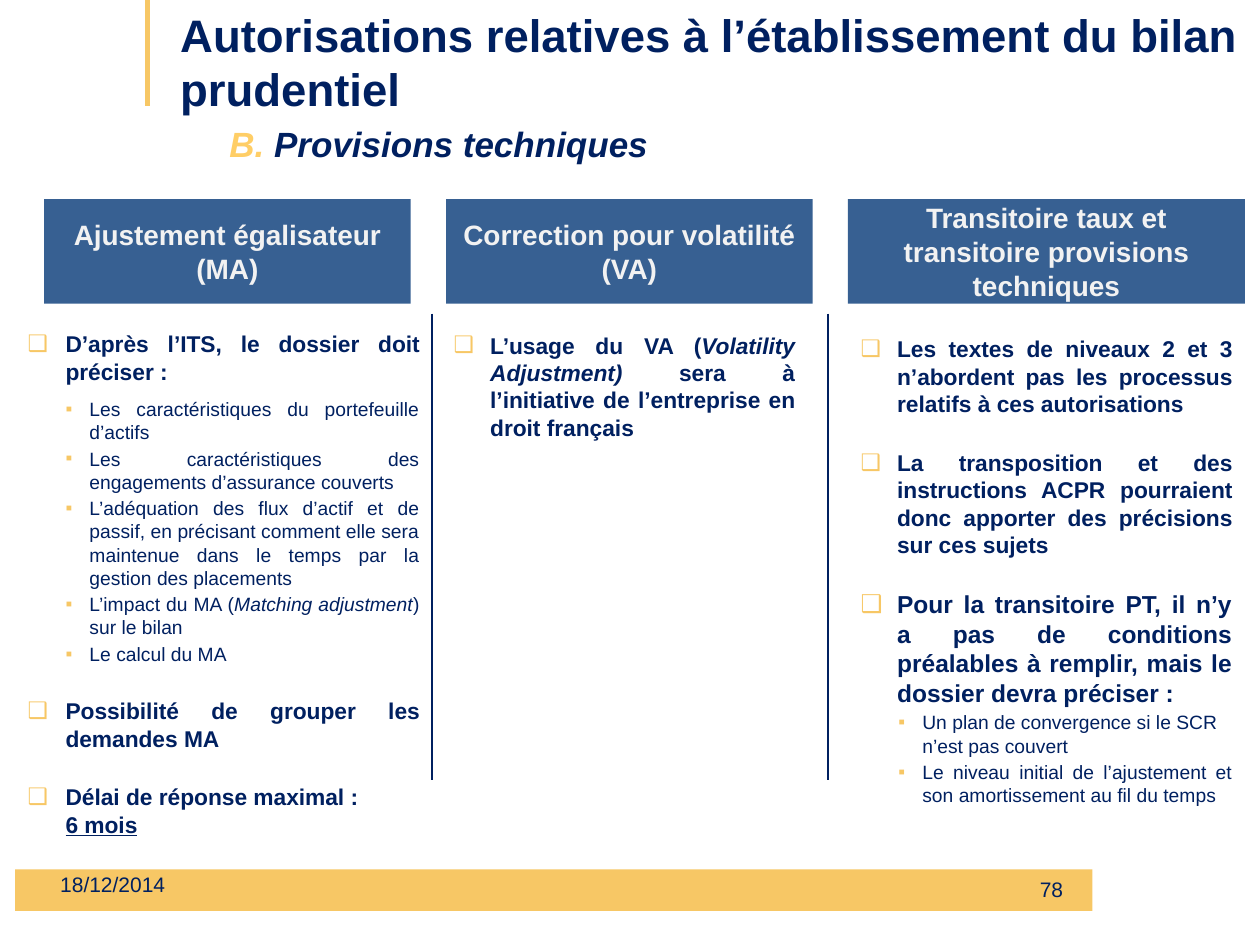
from dataclasses import dataclass

from lxml.etree import SubElement
from pptx import Presentation
from pptx.dml.color import RGBColor
from pptx.enum.shapes import MSO_CONNECTOR, MSO_SHAPE
from pptx.enum.text import MSO_ANCHOR, MSO_AUTO_SIZE, PP_ALIGN
from pptx.oxml.ns import qn
from pptx.util import Inches, Pt

NAVY = RGBColor(0x00, 0x20, 0x60)
GOLD = RGBColor(0xF7, 0xC7, 0x65)
LIGHT_GOLD = RGBColor(0xFF, 0xCE, 0x66)
BLUE = RGBColor(0x37, 0x60, 0x92)
PALE = RGBColor(0xF2, 0xF2, 0xF2)
FONT = "Arial"
HEADER_TOP, HEADER_HEIGHT = 1.58, 0.83


@dataclass
class Span:
    text: str
    italic: bool = False
    underline: bool = False


@dataclass
class Item:
    spans: list[Span]
    before: float = 0
    size: float = 13
    sub: bool = False
    align: PP_ALIGN = PP_ALIGN.JUSTIFY


@dataclass
class Column:
    header: str
    header_left: float
    header_width: float
    body: tuple[float, float, float, float]
    placeholder: int
    hanging: float
    items: list[Item]


def main_item(text: str, before: float = 18, size: float = 13) -> Item:
    return Item([Span(text)], before, size)


def sub_item(text: str, before: float = 2, align: PP_ALIGN = PP_ALIGN.JUSTIFY) -> Item:
    return Item([Span(text)], before, 11, True, align)


COLUMNS = [
    Column("Ajustement égalisateur (MA)", 0.35, 2.91, (0.12, 2.57, 3.31, 4.25), 1, 0.3, [
        main_item("D’après l’ITS, le dossier doit préciser :", 0),
        sub_item("Les caractéristiques du portefeuille d’actifs", 7),
        sub_item("Les caractéristiques des engagements d’assurance couverts"),
        sub_item("L’adéquation des flux d’actif et de passif, en précisant comment "
                 "elle sera maintenue dans le temps par la gestion des placements"),
        Item([Span("L’impact du MA ("), Span("Matching adjustment", italic=True),
              Span(") sur le bilan")], 2, 11, True),
        sub_item("Le calcul du MA"),
        main_item("Possibilité de grouper les demandes MA"),
        Item([Span("Délai de réponse maximal :\v"), Span("6 mois", underline=True)],
             18, align=PP_ALIGN.LEFT),
    ]),
    Column("Correction pour volatilité (VA)", 3.54, 2.91, (3.5, 2.58, 2.91, 2.27), 2, 0.29, [
        Item([Span("L’usage du VA ("), Span("Volatility Adjustment) ", italic=True),
              Span("sera à l’initiative de l’entreprise en droit français")]),
    ]),
    Column("Transitoire taux et transitoire provisions techniques", 6.73, 3.15,
           (6.73, 2.61, 3.15, 3.98), 4, 0.29, [
        main_item("Les textes de niveaux 2 et 3 n’abordent pas les processus relatifs "
                  "à ces autorisations", 0),
        main_item("La transposition et des instructions ACPR pourraient donc apporter "
                  "des précisions sur ces sujets"),
        main_item("Pour la transitoire PT, il n’y a pas de conditions préalables à remplir, "
                  "mais le dossier devra préciser :", size=14),
        sub_item("Un plan de convergence si le SCR n’est pas couvert", align=PP_ALIGN.LEFT),
        sub_item("Le niveau initial de l’ajustement et son amortissement au fil du temps"),
    ]),
]


def place(shape, left: float, top: float, width: float, height: float) -> None:
    shape.left, shape.top = Inches(left), Inches(top)
    shape.width, shape.height = Inches(width), Inches(height)


def style(run, size: float, color: RGBColor = NAVY, bold: bool = False,
          italic: bool = False) -> None:
    run.font.name = FONT
    run.font.size = Pt(size)
    run.font.color.rgb = color
    run.font.bold = bold
    run.font.italic = italic


def set_indent(paragraph, left: float, hanging: float = 0) -> None:
    properties = paragraph._p.get_or_add_pPr()
    properties.set("marL", str(Inches(left)))
    properties.set("indent", str(-Inches(hanging)))


def add_bullet(paragraph, symbol: str) -> None:
    properties = paragraph._p.get_or_add_pPr()
    color = SubElement(properties, qn("a:buClr"))
    SubElement(color, qn("a:srgbClr")).set("val", str(GOLD))
    SubElement(properties, qn("a:buFont")).set("typeface", FONT)
    SubElement(properties, qn("a:buChar")).set("char", symbol)


def add_rule(slide, x: float, top: float, bottom: float, color: RGBColor, width: float) -> None:
    rule = slide.shapes.add_connector(
        MSO_CONNECTOR.STRAIGHT, Inches(x), Inches(top), Inches(x), Inches(bottom))
    rule.line.color.rgb = color
    rule.line.width = Pt(width)
    SubElement(rule._element.spPr, qn("a:effectLst"))


def add_block(slide, left: float, top: float, width: float, height: float, fill: RGBColor):
    block = slide.shapes.add_shape(
        MSO_SHAPE.RECTANGLE, Inches(left), Inches(top), Inches(width), Inches(height))
    block.shadow.inherit = False
    block.fill.solid()
    block.fill.fore_color.rgb = fill
    block.line.fill.background()
    return block


def add_label(slide, text: str, left: float, top: float, width: float, height: float,
              align: PP_ALIGN) -> None:
    label = slide.shapes.add_textbox(Inches(left), Inches(top), Inches(width), Inches(height))
    frame = label.text_frame
    frame.word_wrap = True
    frame.vertical_anchor = MSO_ANCHOR.MIDDLE
    frame.text = text
    frame.paragraphs[0].alignment = align
    style(frame.paragraphs[0].runs[0], 12)


def fill_title(title) -> None:
    place(title, 1.33, 0.13, 8.71, 1.1)
    frame = title.text_frame
    frame.auto_size = MSO_AUTO_SIZE.NONE
    frame.vertical_anchor = MSO_ANCHOR.MIDDLE
    frame.text = "Autorisations relatives à l’établissement du bilan prudentiel"
    heading = frame.paragraphs[0]
    heading.alignment = PP_ALIGN.LEFT
    style(heading.runs[0], 26, bold=True)
    subtitle = frame.add_paragraph()
    subtitle.alignment = PP_ALIGN.LEFT
    subtitle.space_before = Pt(4)
    set_indent(subtitle, 0.39)
    for text, color in (("B. ", LIGHT_GOLD), ("Provisions techniques", NAVY)):
        run = subtitle.add_run()
        run.text = text
        style(run, 20, color, bold=True, italic=True)


def fill_item(paragraph, item: Item, hanging: float) -> None:
    paragraph.level = int(item.sub)
    paragraph.alignment = item.align
    paragraph.space_before = Pt(item.before)
    if item.sub:
        set_indent(paragraph, 0.49, 0.19)
    else:
        set_indent(paragraph, hanging, hanging)
    add_bullet(paragraph, "▪" if item.sub else "❑")
    for span in item.spans:
        run = paragraph.add_run()
        run.text = span.text.rstrip("\v")
        style(run, item.size, bold=not item.sub, italic=span.italic)
        run.font.underline = span.underline
        if span.text.endswith("\v"):
            paragraph.add_line_break()


def draw_column(slide, column: Column) -> None:
    header = add_block(slide, column.header_left, HEADER_TOP, column.header_width,
                       HEADER_HEIGHT, BLUE)
    header.text_frame.vertical_anchor = MSO_ANCHOR.MIDDLE
    header.text_frame.text = column.header
    header.text_frame.paragraphs[0].alignment = PP_ALIGN.CENTER
    style(header.text_frame.paragraphs[0].runs[0], 16, PALE, bold=True)
    body = slide.placeholders[column.placeholder]
    place(body, *column.body)
    frame = body.text_frame
    frame.auto_size = MSO_AUTO_SIZE.NONE
    frame.vertical_anchor = MSO_ANCHOR.TOP
    for index, item in enumerate(column.items):
        paragraph = frame.add_paragraph() if index else frame.paragraphs[0]
        fill_item(paragraph, item, column.hanging)


def main() -> None:
    deck = Presentation()
    deck.slide_width, deck.slide_height = Inches(10), Inches(7.5)
    slide = deck.slides.add_slide(deck.slide_layouts[4])
    unused = slide.placeholders[3]._element
    unused.getparent().remove(unused)
    add_rule(slide, 1.17, 0, 0.84, GOLD, 2.75)
    add_block(slide, 0.12, 6.9, 8.55, 0.33, GOLD)
    fill_title(slide.shapes.title)
    for column in COLUMNS:
        draw_column(slide, column)
    for divider in (3.43, 6.57):
        add_rule(slide, divider, 2.49, 6.19, NAVY, 1.25)
    add_label(slide, "18/12/2014", 0.38, 6.82, 2.33, 0.4, PP_ALIGN.LEFT)
    add_label(slide, "78", 8.07, 6.9, 0.55, 0.31, PP_ALIGN.CENTER)
    deck.save("out.pptx")


if __name__ == "__main__":
    main()
